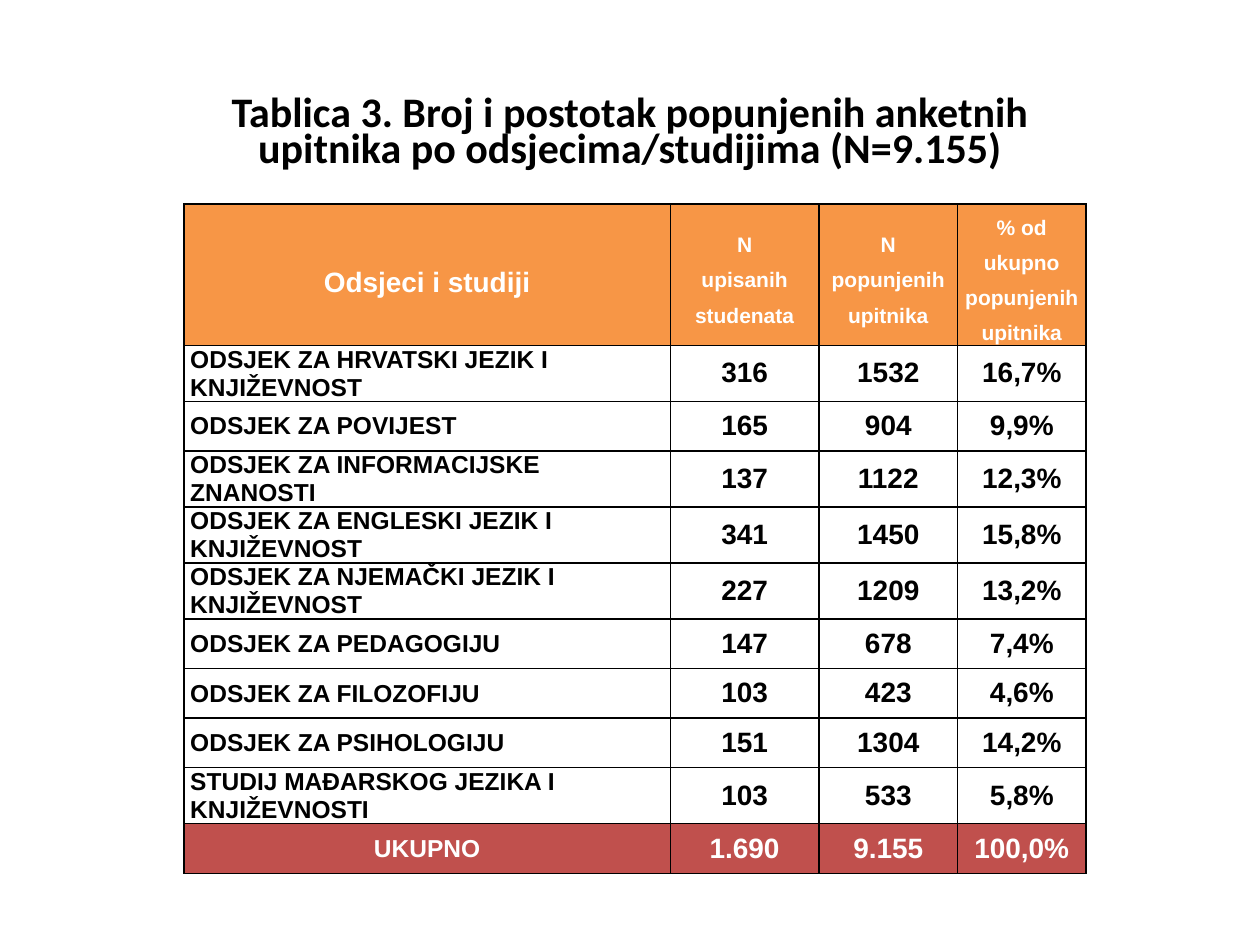
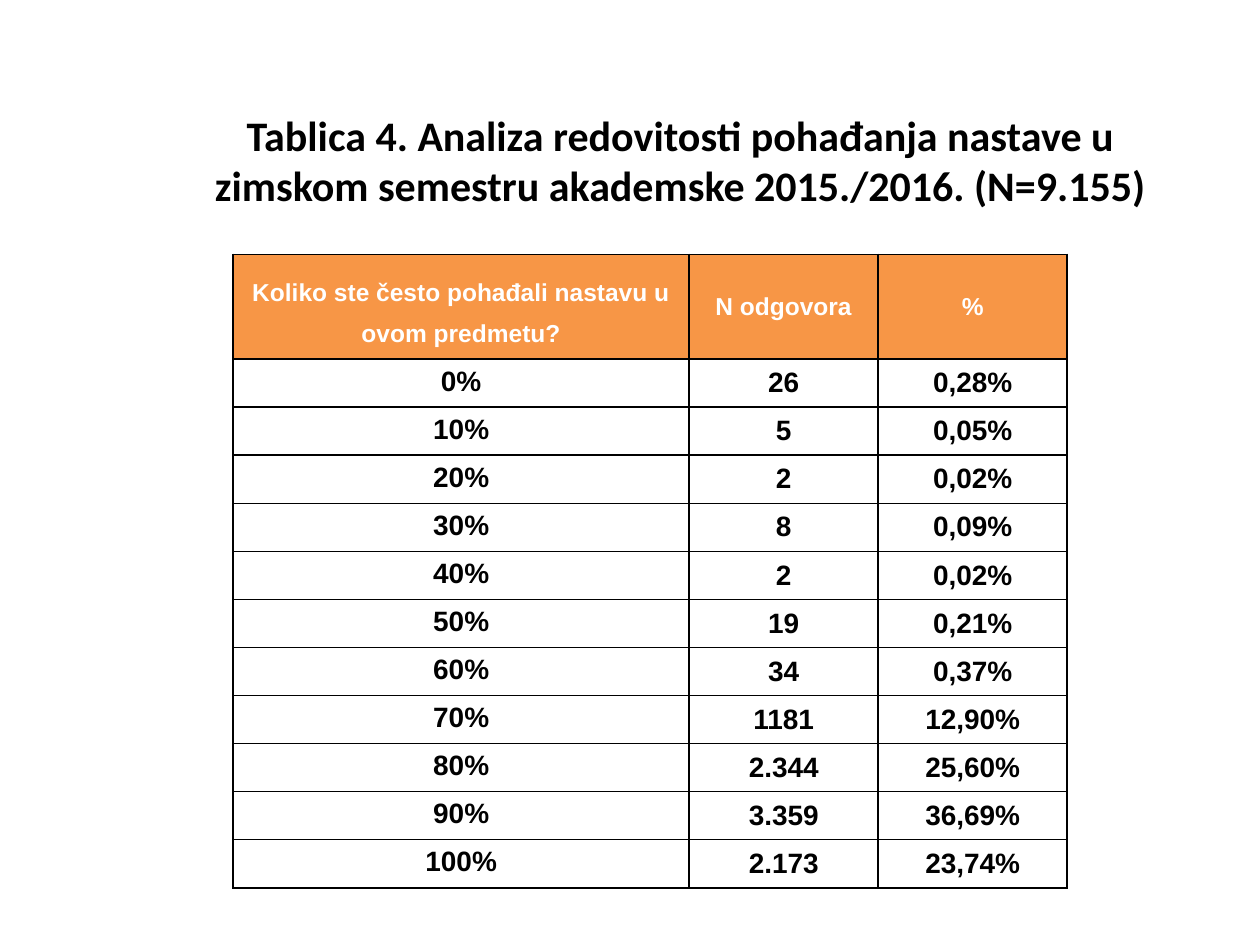
from dataclasses import dataclass, replace

from pptx import Presentation
from pptx.dml.color import RGBColor
from pptx.enum.text import MSO_ANCHOR, MSO_AUTO_SIZE, PP_ALIGN
from pptx.oxml import parse_xml
from pptx.oxml.ns import nsdecls
from pptx.util import Inches, Pt

# Shared look
BLACK = RGBColor(0x00, 0x00, 0x00)
WHITE = RGBColor(0xFF, 0xFF, 0xFF)
ORANGE = RGBColor(0xF7, 0x96, 0x46)
RED = RGBColor(0xC0, 0x50, 0x4D)
TITLE_FONT, TABLE_FONT = "Calibri", "Arial"
SLIDE_WIDTH, SLIDE_HEIGHT = Inches(10), Inches(7.5)
TITLE_ONLY = 5
BORDER = Pt(1)


@dataclass(frozen=True)
class CellStyle:
    size: int = 16
    color: RGBColor = BLACK
    fill: RGBColor | None = None
    align: PP_ALIGN = PP_ALIGN.CENTER
    spacing: float | Pt | None = None
    side_inset: float = 0
    end_inset: float = 0


NUMBER = CellStyle()
DEPARTMENT = CellStyle(14, align=PP_ALIGN.LEFT, spacing=Pt(16), side_inset=0.05)
DEPARTMENT_HEAD = CellStyle(12, WHITE, ORANGE, spacing=1.5, side_inset=0.05)
TOTAL_LABEL = replace(DEPARTMENT, color=WHITE, fill=RED, align=PP_ALIGN.CENTER)
TOTAL_NUMBER = replace(NUMBER, color=WHITE, fill=RED)

ANSWER_NUMBER = replace(NUMBER, fill=WHITE)
ATTENDANCE = replace(ANSWER_NUMBER, spacing=Pt(16), side_inset=0.02, end_inset=0.02)
ATTENDANCE_HEAD = replace(ATTENDANCE, size=14, color=WHITE, fill=ORANGE)

# Table contents
DEPARTMENT_HEADINGS = [
    "Odsjeci i studiji", "N\nupisanih studenata",
    "N popunjenih upitnika", "% od ukupno popunjenih upitnika",
]
DEPARTMENTS = [
    ("ODSJEK ZA HRVATSKI JEZIK I KNJIŽEVNOST", "316", "1532", "16,7%"),
    ("ODSJEK ZA POVIJEST", "165", "904", "9,9%"),
    ("ODSJEK ZA INFORMACIJSKE ZNANOSTI", "137", "1122", "12,3%"),
    ("ODSJEK ZA ENGLESKI JEZIK I KNJIŽEVNOST", "341", "1450", "15,8%"),
    ("ODSJEK ZA NJEMAČKI JEZIK I KNJIŽEVNOST", "227", "1209", "13,2%"),
    ("ODSJEK ZA PEDAGOGIJU", "147", "678", "7,4%"),
    ("ODSJEK ZA FILOZOFIJU", "103", "423", "4,6%"),
    ("ODSJEK ZA PSIHOLOGIJU", "151", "1304", "14,2%"),
    ("STUDIJ MAĐARSKOG JEZIKA I KNJIŽEVNOSTI", "103", "533", "5,8%"),
]
DEPARTMENT_TOTAL = ("UKUPNO", "1.690", "9.155", "100,0%")
ATTENDANCE_HEADINGS = [
    "Koliko ste često pohađali nastavu u ovom predmetu?", "N odgovora", "%",
]
ATTENDANCE_ANSWERS = [
    ("0%", "26", "0,28%"), ("10%", "5", "0,05%"), ("20%", "2", "0,02%"),
    ("30%", "8", "0,09%"), ("40%", "2", "0,02%"), ("50%", "19", "0,21%"),
    ("60%", "34", "0,37%"), ("70%", "1181", "12,90%"), ("80%", "2.344", "25,60%"),
    ("90%", "3.359", "36,69%"), ("100%", "2.173", "23,74%"),
]


def across(percent):
    return round(SLIDE_WIDTH * percent / 100)


def down(percent):
    return round(SLIDE_HEIGHT * percent / 100)


def add_span(para, text, font, size, color):
    span = para.add_run()
    span.text = text
    span.font.name = font
    span.font.size = Pt(size)
    span.font.bold = True
    span.font.color.rgb = color


def add_titled_page(deck, lines, left, top, width, height, spacing=None):
    """Add a title-only page; the title's place is in percent of the slide."""
    page = deck.slides.add_slide(deck.slide_layouts[TITLE_ONLY])
    title = page.shapes.title
    title.left, title.top = across(left), down(top)
    title.width, title.height = across(width), down(height)
    box = title.text_frame
    box.word_wrap = True
    box.auto_size = MSO_AUTO_SIZE.NONE
    box.vertical_anchor = MSO_ANCHOR.MIDDLE
    para = box.paragraphs[0]
    para.alignment = PP_ALIGN.CENTER
    para.line_spacing = spacing
    for index, line in enumerate(lines):
        if index:
            para.add_line_break()
        add_span(para, line, TITLE_FONT, 24, BLACK)
    return page


def add_borders(cell):
    properties = cell._tc.get_or_add_tcPr()
    for side in "LRTB":
        properties.append(parse_xml(
            f'<a:ln{side} {nsdecls("a")} w="{BORDER}"><a:solidFill>'
            f'<a:srgbClr val="{BLACK}"/></a:solidFill></a:ln{side}>'
        ))


def fill_cell(cell, text, style):
    add_borders(cell)
    if style.fill is None:
        cell.fill.background()
    else:
        cell.fill.solid()
        cell.fill.fore_color.rgb = style.fill
    cell.vertical_anchor = MSO_ANCHOR.MIDDLE
    cell.margin_left = cell.margin_right = Inches(style.side_inset)
    cell.margin_top = cell.margin_bottom = Inches(style.end_inset)
    box = cell.text_frame
    for index, line in enumerate(text.split("\n")):
        para = box.add_paragraph() if index else box.paragraphs[0]
        para.alignment = style.align
        para.line_spacing = style.spacing
        add_span(para, line, TABLE_FONT, style.size, style.color)


def add_grid(page, left, top, columns, head_height, row_height, rows):
    """Add a table from (texts, styles) rows; lengths in percent of the slide."""
    heights = [head_height] + [row_height] * (len(rows) - 1)
    frame = page.shapes.add_table(
        len(rows), len(columns), across(left), down(top),
        across(sum(columns)), down(sum(heights)),
    )
    table = frame.table
    table.first_row = table.horz_banding = False
    for column, width in zip(table.columns, columns):
        column.width = across(width)
    for row, height, (texts, styles) in zip(table.rows, heights, rows):
        row.height = down(height)
        for cell, text, style in zip(row.cells, texts, styles):
            fill_cell(cell, text, style)


def add_departments_page(deck):
    page = add_titled_page(
        deck,
        ["Tablica 3. Broj i postotak popunjenih anketnih",
         "upitnika po odsjecima/studijima (N=9.155)"],
        4.3, 8, 91.4, 12.53, spacing=0.7,
    )
    head_styles = [replace(DEPARTMENT_HEAD, size=16)] + [DEPARTMENT_HEAD] * 3
    rows = [(DEPARTMENT_HEADINGS, head_styles)]
    rows += [(texts, [DEPARTMENT] + [NUMBER] * 3) for texts in DEPARTMENTS]
    rows.append((DEPARTMENT_TOTAL, [TOTAL_LABEL] + [TOTAL_NUMBER] * 3))
    add_grid(page, 14.6, 21.6, [38.6, 11.8, 11, 10.2], 12, 5.25, rows)


def add_attendance_page(deck):
    page = add_titled_page(
        deck,
        ["Tablica 4. Analiza redovitosti pohađanja nastave u "
         "zimskom semestru akademske 2015./2016. (N=9.155)"],
        15.4, 10.13, 77.2, 13.6,
    )
    head_styles = [replace(ATTENDANCE_HEAD, spacing=1.5)] + [ATTENDANCE_HEAD] * 2
    rows = [(ATTENDANCE_HEADINGS, head_styles)]
    rows += [(texts, [ATTENDANCE] + [ANSWER_NUMBER] * 2) for texts in ATTENDANCE_ANSWERS]
    add_grid(page, 18.5, 26.93, [36.2, 15, 15], 11.07, 5.09, rows)


def main():
    deck = Presentation()
    deck.slide_width, deck.slide_height = SLIDE_WIDTH, SLIDE_HEIGHT
    add_departments_page(deck)
    add_attendance_page(deck)
    deck.save("out.pptx")


if __name__ == "__main__":
    main()
